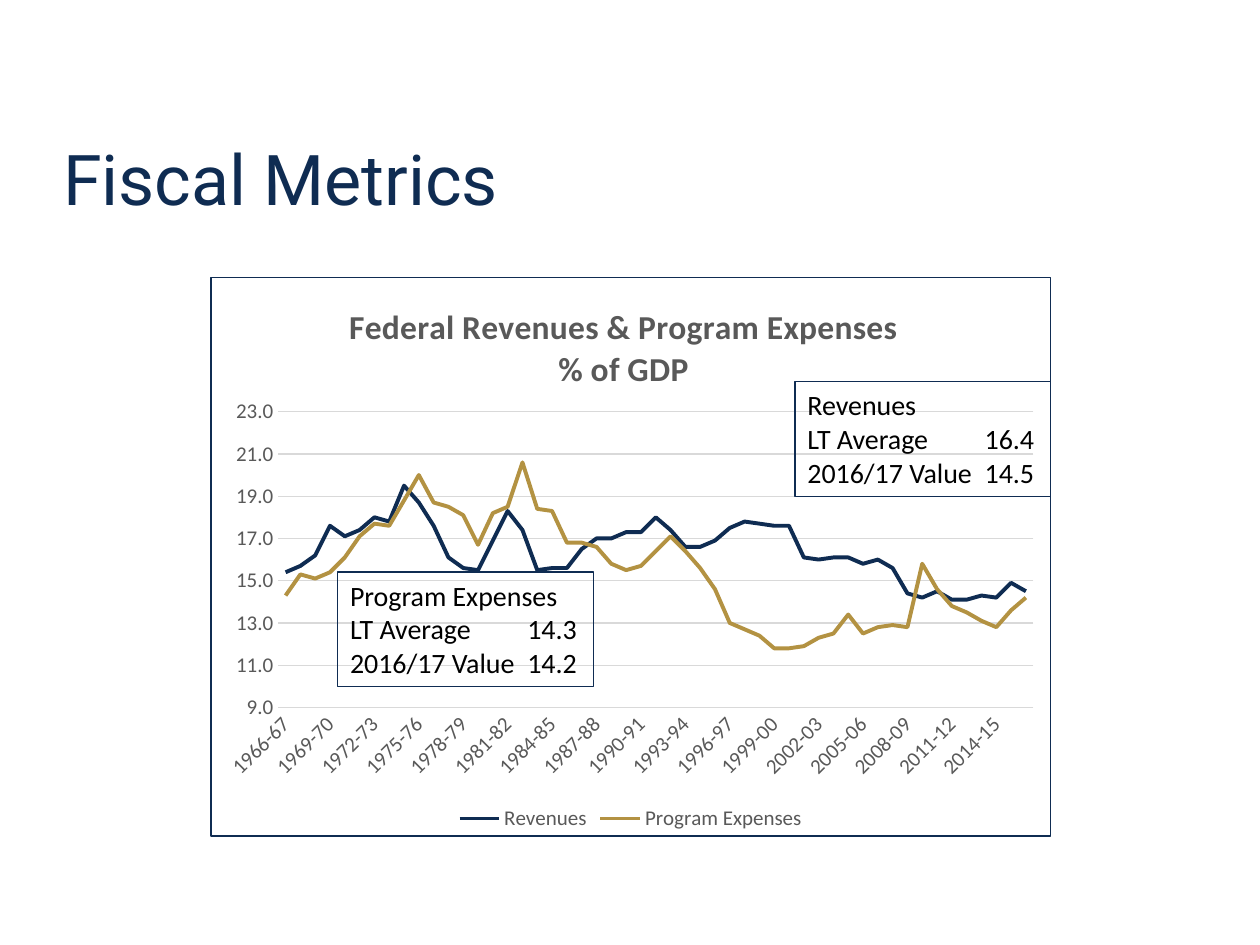
"""Build the Fiscal Metrics slide with a line chart and two value boxes."""
from pptx import Presentation
from pptx.chart.data import CategoryChartData
from pptx.dml.color import RGBColor
from pptx.enum.chart import XL_CHART_TYPE, XL_LEGEND_POSITION, XL_TICK_MARK
from pptx.enum.shapes import MSO_SHAPE
from pptx.enum.text import MSO_ANCHOR, PP_ALIGN
from pptx.oxml import parse_xml
from pptx.oxml.ns import nsdecls
from pptx.util import Inches, Pt

NAVY, GOLD, GREY, PALE, BLACK = "0F2C52", "B39242", "595959", "D9D9D9", "000000"


def style(target, color, **values):
    """Set the colour and the given format values of a font or line."""
    color_format = target.fill if hasattr(target, "fill") else target
    color_format.solid()
    color_format.fore_color.rgb = RGBColor.from_string(color)
    for name, value in values.items():
        setattr(target, name, value)


def place(element, index, target, **fractions):
    """Give a chart part a manual layout in fractions of the chart."""
    for old_layout in element.xpath("c:layout"):
        element.remove(old_layout)
    inner = f'<c:layoutTarget val="{target}"/>' if target else ""
    modes = '<c:xMode val="edge"/><c:yMode val="edge"/>'
    sizes = "".join(f'<c:{name} val="{value}"/>' for name, value in fractions.items())
    element.insert(index, parse_xml(
        f'<c:layout {nsdecls("c")}><c:manualLayout>{inner}{modes}{sizes}</c:manualLayout></c:layout>'))


presentation = Presentation()
presentation.slide_width, presentation.slide_height = Inches(10), Inches(7.5)
slide = presentation.slides.add_slide(presentation.slide_layouts[5])

title = slide.shapes.title
title.left, title.top, title.width, title.height = [Inches(n) for n in (0.5, 0.83, 9, 0.96)]
title_format = {"vertical_anchor": MSO_ANCHOR.BOTTOM, "margin_left": 0, "margin_right": 0,
                "word_wrap": True}
for name, value in title_format.items():
    setattr(title.text_frame, name, value)
title.text_frame.text = "Fiscal Metrics"
paragraph = title.text_frame.paragraphs[0]
paragraph.alignment = PP_ALIGN.LEFT
style(paragraph.font, NAVY, name="Roboto", size=Pt(40))

revenues = [
    15.4, 15.7, 16.2, 17.6, 17.1, 17.4, 18, 17.8, 19.5, 18.7, 17.6, 16.1, 15.6, 15.5, 16.9, 18.3, 17.4,
    15.5, 15.6, 15.6, 16.5, 17, 17, 17.3, 17.3, 18, 17.4, 16.6, 16.6, 16.9, 17.5, 17.8, 17.7, 17.6,
    17.6, 16.1, 16, 16.1, 16.1, 15.8, 16, 15.6, 14.4, 14.2, 14.5, 14.1, 14.1, 14.3, 14.2, 14.9, 14.5]
expenses = [
    14.3, 15.3, 15.1, 15.4, 16.1, 17.1, 17.7, 17.6, 18.8, 20, 18.7, 18.5, 18.1, 16.7, 18.2, 18.5, 20.6,
    18.4, 18.3, 16.8, 16.8, 16.6, 15.8, 15.5, 15.7, 16.4, 17.1, 16.4, 15.6, 14.6, 13, 12.7, 12.4, 11.8,
    11.8, 11.9, 12.3, 12.5, 13.4, 12.5, 12.8, 12.9, 12.8, 15.8, 14.6, 13.8, 13.5, 13.1, 12.8, 13.6, 14.2]
chart_data = CategoryChartData(number_format="0.0")
chart_data.categories = [f"{year}-{(year + 1) % 100:02d}" for year in range(1966, 2017)]
chart_data.add_series("Revenues", revenues)
chart_data.add_series("Program Expenses", expenses)
chart = slide.shapes.add_chart(
    XL_CHART_TYPE.LINE, Inches(1.67), Inches(2.2), Inches(6.67), Inches(4.44), chart_data).chart
style(chart.font, BLACK, name="Calibri", size=Pt(10))

chart.has_title = True
chart_title = chart.chart_title
chart_title.text_frame.text = "Federal Revenues & Program Expenses\n% of GDP"
for paragraph in chart_title.text_frame.paragraphs:
    style(paragraph.font, GREY, name="Calibri", size=Pt(19.2), bold=True)
chart_space = chart.element
place(chart_space.xpath("c:chart/c:title")[0], 1, None, x=0.16, y=0.04)
place(chart_space.xpath("c:chart/c:plotArea")[0], 0, "inner", x=0.08, y=0.24, w=0.9, h=0.53)
chart_space.xpath("c:chart")[0].addnext(parse_xml(
    f'<c:spPr {nsdecls("c", "a")}><a:noFill/><a:ln w="9525"><a:solidFill>'
    f'<a:srgbClr val="{NAVY}"/></a:solidFill></a:ln></c:spPr>'))

chart.has_legend = True
chart.legend.position = XL_LEGEND_POSITION.BOTTOM
chart.legend.include_in_layout = False
category_axis, value_axis = chart.category_axis, chart.value_axis
for axis in (category_axis, value_axis):
    axis.major_tick_mark = axis.minor_tick_mark = XL_TICK_MARK.NONE
for part in (category_axis.tick_labels, value_axis.tick_labels, chart.legend):
    style(part.font, GREY, name="Calibri", size=Pt(12))
style(category_axis.format.line, PALE, width=Pt(0.75))
category_element = chart_space.xpath(".//c:catAx")[0]
category_element.xpath("c:txPr/a:bodyPr")[0].set("rot", "-2700000")
category_element.xpath("c:noMultiLvlLbl")[0].addprevious(
    parse_xml(f'<c:tickLblSkip {nsdecls("c")} val="3"/>'))

value_format = {"minimum_scale": 9, "maximum_scale": 23, "major_unit": 2, "has_major_gridlines": True}
for name, value in value_format.items():
    setattr(value_axis, name, value)
value_axis.tick_labels.number_format = "#,##0.0"
value_axis.tick_labels.number_format_is_linked = False
value_axis.format.line.fill.background()
style(value_axis.major_gridlines.format.line, PALE, width=Pt(0.75))
for series, color in zip(chart.plots[0].series, (NAVY, GOLD)):
    series.smooth = False
    style(series.format.line, color, width=Pt(2.25))

value_boxes = [
    ("Program Expenses", "14.3", "14.2", 2.68, 4.54),
    ("Revenues", "16.4", "14.5", 6.31, 3.03),
]
for heading, average, latest, left, top in value_boxes:
    shape = slide.shapes.add_shape(
        MSO_SHAPE.RECTANGLE, Inches(left), Inches(top), Inches(2.03), Inches(0.91))
    shape.shadow.inherit = False
    shape.fill.background()
    style(shape.line, NAVY, width=Pt(0.75))
    shape.text_frame.word_wrap = True
    shape.text_frame.vertical_anchor = MSO_ANCHOR.TOP
    shape.text_frame.text = f"{heading}\nLT Average\t{average}\n2016/17 Value\t{latest}"
    for paragraph in shape.text_frame.paragraphs:
        paragraph.alignment = PP_ALIGN.LEFT
        paragraph_properties = paragraph._p.get_or_add_pPr()
        paragraph_properties.append(parse_xml(
            f'<a:tabLst {nsdecls("a")}><a:tab pos="{Inches(1.8)}" algn="r"/></a:tabLst>'))
        style(paragraph.font, BLACK, name="Calibri", size=Pt(16))

presentation.save("out.pptx")
